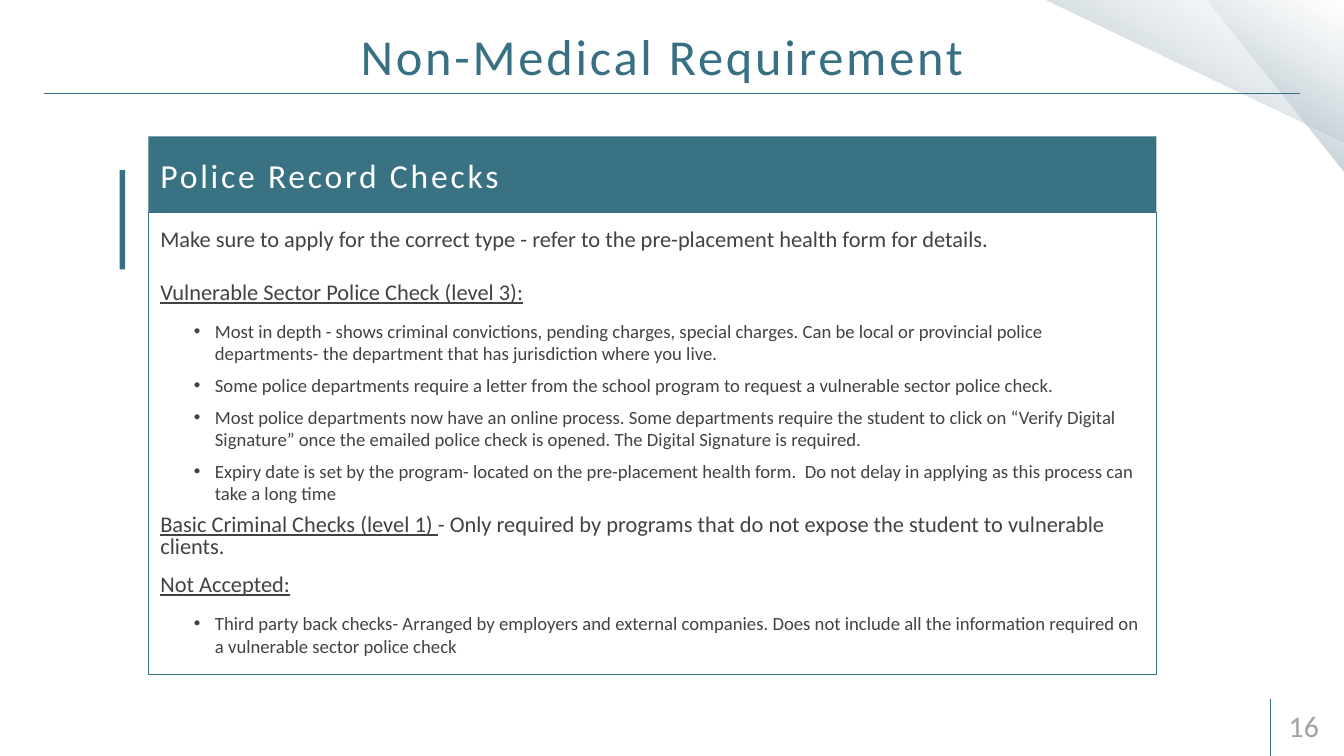
"""Build the slide on police record checks for placements."""
from dataclasses import dataclass

from lxml.etree import SubElement
from pptx import Presentation
from pptx.dml.color import RGBColor
from pptx.enum.shapes import MSO_CONNECTOR as Connector, MSO_SHAPE as Preset
from pptx.enum.text import MSO_ANCHOR as Anchor, MSO_AUTO_SIZE as AutoSize, PP_ALIGN as Align
from pptx.oxml import parse_xml
from pptx.oxml.ns import nsdecls, qn
from pptx.util import Pt

PX = 9525


@dataclass(frozen=True)
class Theme:
    font: str = "Calibri"
    teal: str = "376F83"
    panel: str = "397283"
    white: str = "FFFFFF"
    text: str = "424242"
    number: str = "A2A2A2"
    gradient: tuple = ((0, "9DB4C0", 100), (50, "B3C3CC", 44), (100, "E2E8EB", 0))
    title_size: int = 54
    heading_size: int = 36
    number_size: int = 32
    body_size: int = 24
    bullet_size: int = 20


theme = Theme()


def place(shape, left, top, width, height):
    shape.left, shape.top, shape.width, shape.height = (
        value * PX for value in (left, top, width, height))
    frame = shape.text_frame
    frame.word_wrap = True
    frame.auto_size = AutoSize.NONE
    frame.vertical_anchor = Anchor.MIDDLE
    frame.margin_left = frame.margin_right = 17 * PX
    frame.margin_top = frame.margin_bottom = 9 * PX
    return frame


def style(paragraph, size, color, spacing=0):
    font = paragraph.font
    font.name, font.size, font.bold = theme.font, Pt(size), False
    font.color.rgb = RGBColor.from_string(color)
    paragraph._p.pPr.find(qn("a:defRPr")).set("spc", str(spacing * 100))


presentation = Presentation()
presentation.slide_width, presentation.slide_height = 1920 * PX, 1080 * PX
slide = presentation.slides.add_slide(presentation.slide_layouts[4])
title, heading, body, *unused = slide.placeholders
for placeholder in unused:
    placeholder._element.getparent().remove(placeholder._element)

stops = "".join(
    f'<a:gs pos="{position * 1000}"><a:srgbClr val="{color}">'
    f'<a:alpha val="{alpha * 1000}"/></a:srgbClr></a:gs>'
    for position, color, alpha in theme.gradient)
for left, width, height in ((1724, 196, 247), (1492, 430, 204)):
    triangle = slide.shapes.add_shape(
        Preset.RIGHT_TRIANGLE, left * PX, 0, width * PX, height * PX)
    triangle.rotation = 180
    triangle.shadow.inherit = False
    triangle.line.fill.background()
    triangle._element.spPr.find(qn("a:prstGeom")).addnext(parse_xml(
        f'<a:gradFill rotWithShape="1" {nsdecls("a")}><a:gsLst>{stops}</a:gsLst>'
        '<a:lin ang="7200000" scaled="0"/></a:gradFill>'))

for ends in ((63, 133, 1857, 133), (1815, 1080, 1815, 998)):
    rule = slide.shapes.add_connector(Connector.STRAIGHT, *(value * PX for value in ends))
    rule.line.color.rgb = RGBColor.from_string(theme.teal)
    rule.line.width = Pt(1)
    SubElement(rule._element.spPr, qn("a:effectLst"))

accent = slide.shapes.add_shape(Preset.RECTANGLE, 171 * PX, 243 * PX, 8 * PX, 142 * PX)
accent.shadow.inherit = False
accent.fill.solid()
accent.fill.fore_color.rgb = RGBColor.from_string(theme.teal)
accent.line.fill.background()

frame = place(title, 67, 20, 1758, 118)
frame.text = "Non-Medical Requirement"
frame.paragraphs[0].alignment = Align.CENTER
style(frame.paragraphs[0], theme.title_size, theme.teal, 3)

number = slide.shapes.add_textbox(0, 0, 0, 0)
frame = place(number, 1824, 1007, 95, 58)
frame.text = "16"
style(frame.paragraphs[0], theme.number_size, theme.number)

frame = place(heading, 212, 195, 1440, 109)
heading.fill.solid()
heading.fill.fore_color.rgb = RGBColor.from_string(theme.panel)
frame.text = "Police Record Checks"
frame.paragraphs[0].space_before = Pt(0)
style(frame.paragraphs[0], theme.heading_size, theme.white, 3)

frame = place(body, 212, 303, 1440, 661)
body.line.color.rgb = RGBColor.from_string(theme.panel)
body.line.width = Pt(0.75)

# level, space before, space after, underlined text, plain text
content = (
    (0, 0, 34, "", "Make sure to apply for the correct type - refer to the pre-placement "
     "health form for details."),
    (0, 0, 12, "Vulnerable Sector Police Check (level 3):", ""),
    (1, 4, 6, "", "Most in depth - shows criminal convictions, pending charges, special charges. "
     "Can be local or provincial police departments- the department that has jurisdiction "
     "where you live."),
    (1, 4, 6, "", "Some police departments require a letter from the school program to request "
     "a vulnerable sector police check."),
    (1, 4, 6, "", "Most police departments now have an online process. Some departments require "
     "the student to click on “Verify Digital Signature” once the emailed police check is "
     "opened. The Digital Signature is required."),
    (1, 4, 6, "", "Expiry date is set by the program- located on the pre-placement health form.  "
     "Do not delay in applying as this process can take a long time"),
    (0, 6, 12, "Basic Criminal Checks (level 1) ", "- Only required by programs that do not "
     "expose the student to vulnerable clients."),
    (0, 6, 12, "Not Accepted:", ""),
    (1, 4, 12, "", "Third party back checks- Arranged by employers and external companies. Does "
     "not include all the information required on a vulnerable sector police check"),
)
for index, (level, before, after, underlined, plain) in enumerate(content):
    paragraph = frame.add_paragraph() if index else frame.paragraphs[0]
    paragraph.level = level
    properties = paragraph._p.get_or_add_pPr()
    properties.set("marL", str(78 * PX * level))
    properties.set("indent", str(-30 * PX * level))
    if level:
        SubElement(properties, qn("a:buFont"), typeface="Arial")
        SubElement(properties, qn("a:buChar"), char="•")
    else:
        SubElement(properties, qn("a:buNone"))
    paragraph.line_spacing = 1.0 if level else 0.8
    paragraph.space_before, paragraph.space_after = Pt(before), Pt(after)
    style(paragraph, theme.bullet_size if level else theme.body_size, theme.text)
    for text, underline in ((underlined, True), (plain, False)):
        if text:
            run = paragraph.add_run()
            run.text = text
            run.font.underline = underline

presentation.save("out.pptx")
